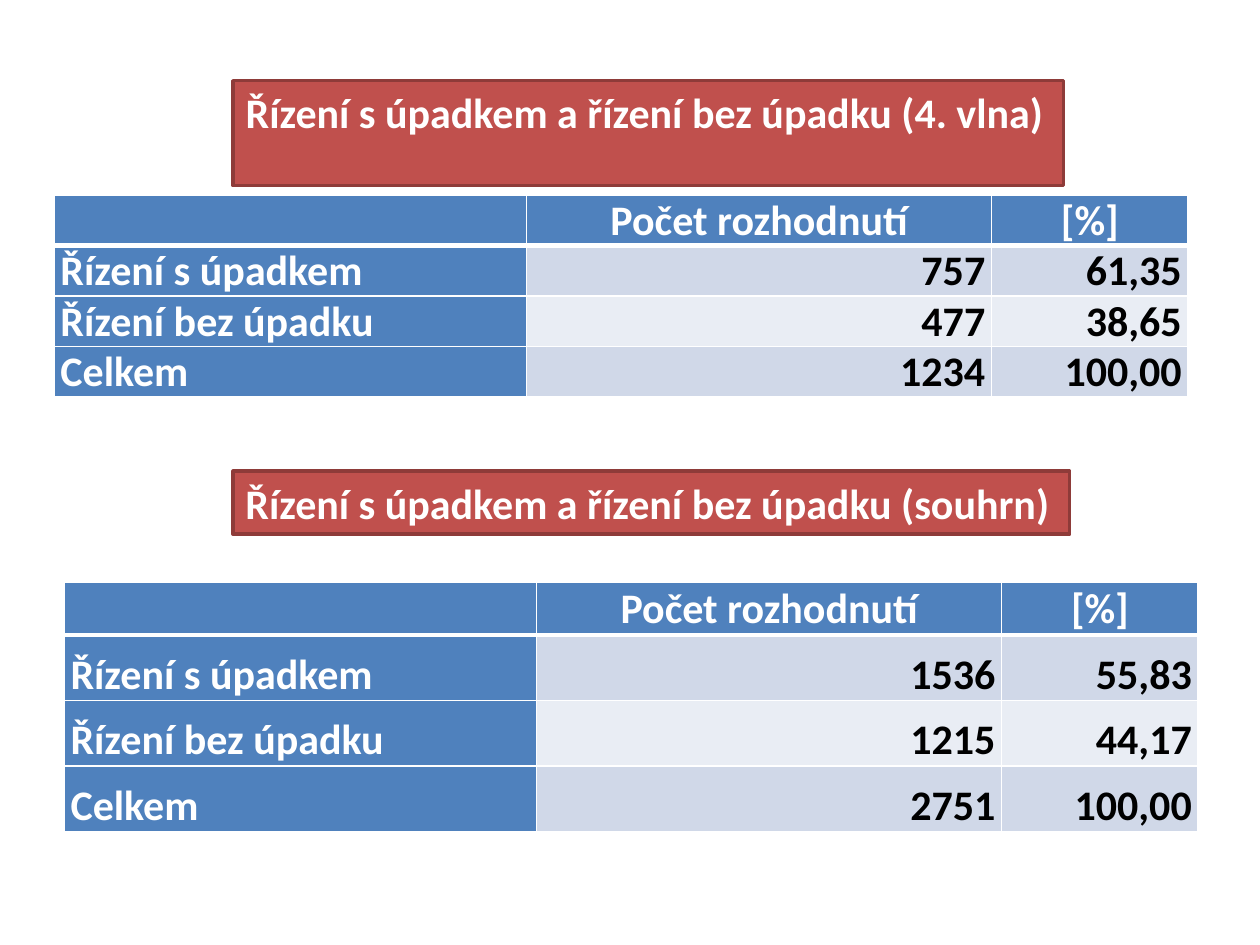
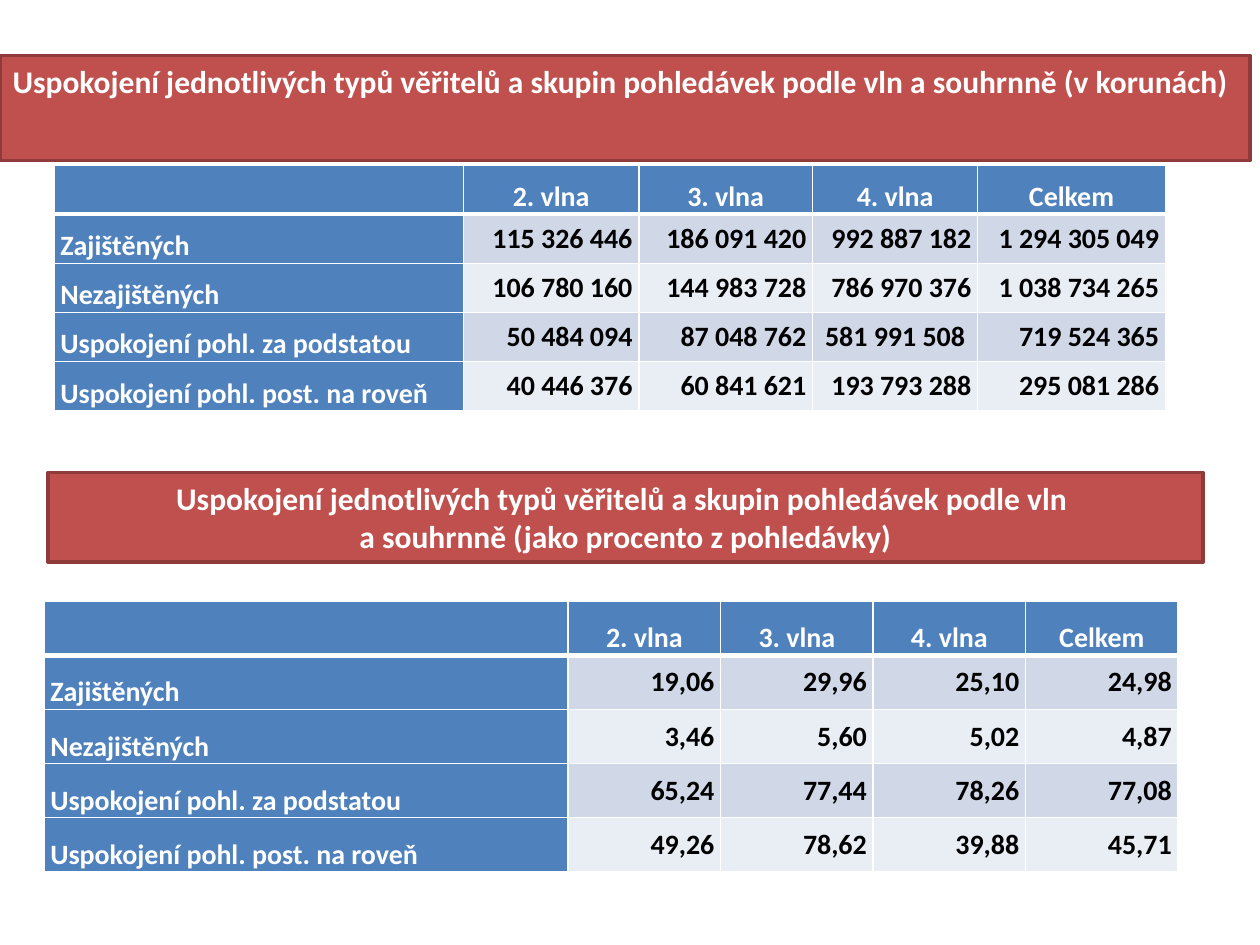
import pptx
import pptx.dml.color
import pptx.enum.shapes
import pptx.enum.text
import pptx.oxml
import pptx.oxml.ns
import pptx.util

EMU_PER_PX = 9144  # 100 px to the inch
FONT = "Calibri"
WHITE, BLACK = "FFFFFF", "000000"
RED, DARK_RED = "C0504D", "8E3B39"
BLUE = "4F81BD"
BANDS = ["D0D8E8", "E9EDF4"]

ALIGN = pptx.enum.text.PP_ALIGN
ANCHOR = pptx.enum.text.MSO_ANCHOR


def px(length):
    return pptx.util.Emu(length * EMU_PER_PX)


def color(hex_string):
    return pptx.dml.color.RGBColor.from_string(hex_string)


def fill(target, hex_string):
    target.fill.solid()
    target.fill.fore_color.rgb = color(hex_string)


class Deck:
    """Shared style and the slide being built."""

    def __init__(self):
        self.presentation = pptx.Presentation()
        self.presentation.slide_width = px(1000)
        self.presentation.slide_height = px(750)
        self.slide = None

    def new_slide(self):
        title_only = self.presentation.slide_layouts[5]
        self.slide = self.presentation.slides.add_slide(title_only)

    def style(self, paragraph, size, hex_string, align):
        paragraph.alignment = align
        paragraph.font.name = FONT
        paragraph.font.size = pptx.util.Pt(size)
        paragraph.font.bold = True
        paragraph.font.color.rgb = color(hex_string)

    def title(self, box, text, size):
        banner = self.slide.shapes.title
        banner.left, banner.top, banner.width, banner.height = map(px, box)
        self.format_banner(banner, text, size)

    def subtitle(self, box, text, size, **layout):
        rectangle = pptx.enum.shapes.MSO_SHAPE.RECTANGLE
        banner = self.slide.shapes.add_shape(rectangle, *map(px, box))
        banner.shadow.inherit = False
        self.format_banner(banner, text, size, **layout)

    def format_banner(self, banner, text, size, align=ALIGN.LEFT, wrap=False):
        fill(banner, RED)
        banner.line.color.rgb = color(DARK_RED)
        banner.line.width = pptx.util.Pt(2)
        frame = banner.text_frame
        frame.text = text
        frame.word_wrap = wrap
        frame.auto_size = pptx.enum.text.MSO_AUTO_SIZE.SHAPE_TO_FIT_TEXT
        frame.vertical_anchor = ANCHOR.TOP
        for paragraph in frame.paragraphs:
            self.style(paragraph, size, WHITE, align)

    def borders(self, cell, top, bottom):
        properties = cell._tc.get_or_add_tcPr()
        for side, points in zip("LRTB", (1, 1, top, bottom)):
            properties.append(pptx.oxml.parse_xml(
                f'<a:ln{side} {pptx.oxml.ns.nsdecls("a")} w="{points * 12700}">'
                f'<a:solidFill><a:srgbClr val="{WHITE}"/></a:solidFill></a:ln{side}>'))

    def table(self, left, top, widths, heights, rows, size, value_anchor):
        table = self.slide.shapes.add_table(
            len(rows), len(widths), px(left), px(top),
            px(sum(widths)), px(sum(heights))).table
        table.horz_banding = False
        for column, width in zip(table.columns, widths):
            column.width = px(width)
        for r, (texts, height) in enumerate(zip(rows, heights)):
            table.rows[r].height = px(height)
            for c, text in enumerate(texts):
                self.cell(table.cell(r, c), r, c, text, size, value_anchor)

    def cell(self, cell, r, c, text, size, value_anchor):
        is_value = r > 0 and c > 0
        # A thick rule separates the header from the rows below
        self.borders(cell, top=3 if r == 1 else 1, bottom=3 if r == 0 else 1)
        fill(cell, BANDS[(r - 1) % 2] if is_value else BLUE)
        cell.margin_left = cell.margin_right = px(5)
        cell.margin_top = cell.margin_bottom = 0
        cell.vertical_anchor = value_anchor if is_value else ANCHOR.BOTTOM
        cell.text = text
        paragraph = cell.text_frame.paragraphs[0]
        paragraph.space_before = pptx.util.Pt(6)
        align = ALIGN.RIGHT if is_value else ALIGN.CENTER if r == 0 else ALIGN.LEFT
        self.style(paragraph, size, BLACK if is_value else WHITE, align)


# Row and column headings
DECISIONS = ["", "Počet rozhodnutí", "[%]"]
PROCEEDINGS = ["Řízení s úpadkem", "Řízení bez úpadku", "Celkem"]
WAVES = ["", "2. vlna", "3. vlna", "4. vlna", "Celkem"]
CLAIMS = ["Zajištěných", "Nezajištěných", "Uspokojení pohl. za podstatou",
          "Uspokojení pohl. post. na roveň"]


def with_headings(header, labels, values):
    return [header] + [[label, *row] for label, row in zip(labels, values)]


def build_proceedings(deck):
    deck.new_slide()
    widths = [375, 369, 156]

    # Fourth wave
    deck.title((185, 64, 659, 50),
               "Řízení s úpadkem a řízení bez úpadku (4. vlna)", 24)
    fourth_wave = [["757", "61,35"], ["477", "38,65"], ["1234", "100,00"]]
    deck.table(43, 155, widths, [40] * 4,
               with_headings(DECISIONS, PROCEEDINGS, fourth_wave), 24, ANCHOR.BOTTOM)

    # All waves
    deck.subtitle((185, 374, 664, 50),
                  "Řízení s úpadkem a řízení bez úpadku (souhrn)", 24)
    summary = [["1536", "55,83"], ["1215", "44,17"], ["2751", "100,00"]]
    deck.table(51, 462, widths, [42] + [52] * 3,
               with_headings(DECISIONS, PROCEEDINGS, summary), 24, ANCHOR.BOTTOM)


def build_satisfaction(deck):
    deck.new_slide()

    # Amounts in crowns
    deck.title((0, 44, 992, 40),
               "Uspokojení jednotlivých typů věřitelů a skupin pohledávek "
               "podle vln a souhrnně (v korunách)", 18)
    crowns = [
        ["115 326 446", "186 091 420", "992 887 182", "1 294 305 049"],
        ["106 780 160", "144 983 728", "786 970 376", "1 038 734 265"],
        ["50 484 094", "87 048 762", "581 991 508 ", "719 524 365"],
        ["40 446 376", "60 841 621", "193 793 288", "295 081 286"],
    ]
    deck.table(43, 131, [325, 139, 138, 131, 149], [39] * 5,
               with_headings(WAVES, CLAIMS, crowns), 16, ANCHOR.MIDDLE)

    # Share of the claim
    deck.subtitle((38, 375, 917, 71),
                  "Uspokojení jednotlivých typů věřitelů a skupin pohledávek podle vln \n"
                  "a souhrnně (jako procento z pohledávky)",
                  18, align=ALIGN.CENTER, wrap=True)
    percentages = [
        ["19,06", "29,96", "25,10", "24,98"],
        ["3,46", "5,60", "5,02", "4,87"],
        ["65,24", "77,44", "78,26", "77,08"],
        ["49,26", "78,62", "39,88", "45,71"],
    ]
    deck.table(35, 477, [416] + [121] * 4, [43] * 5,
               with_headings(WAVES, CLAIMS, percentages), 16, ANCHOR.MIDDLE)


def main():
    deck = Deck()
    build_proceedings(deck)
    build_satisfaction(deck)
    deck.presentation.save("out.pptx")


if __name__ == "__main__":
    main()
